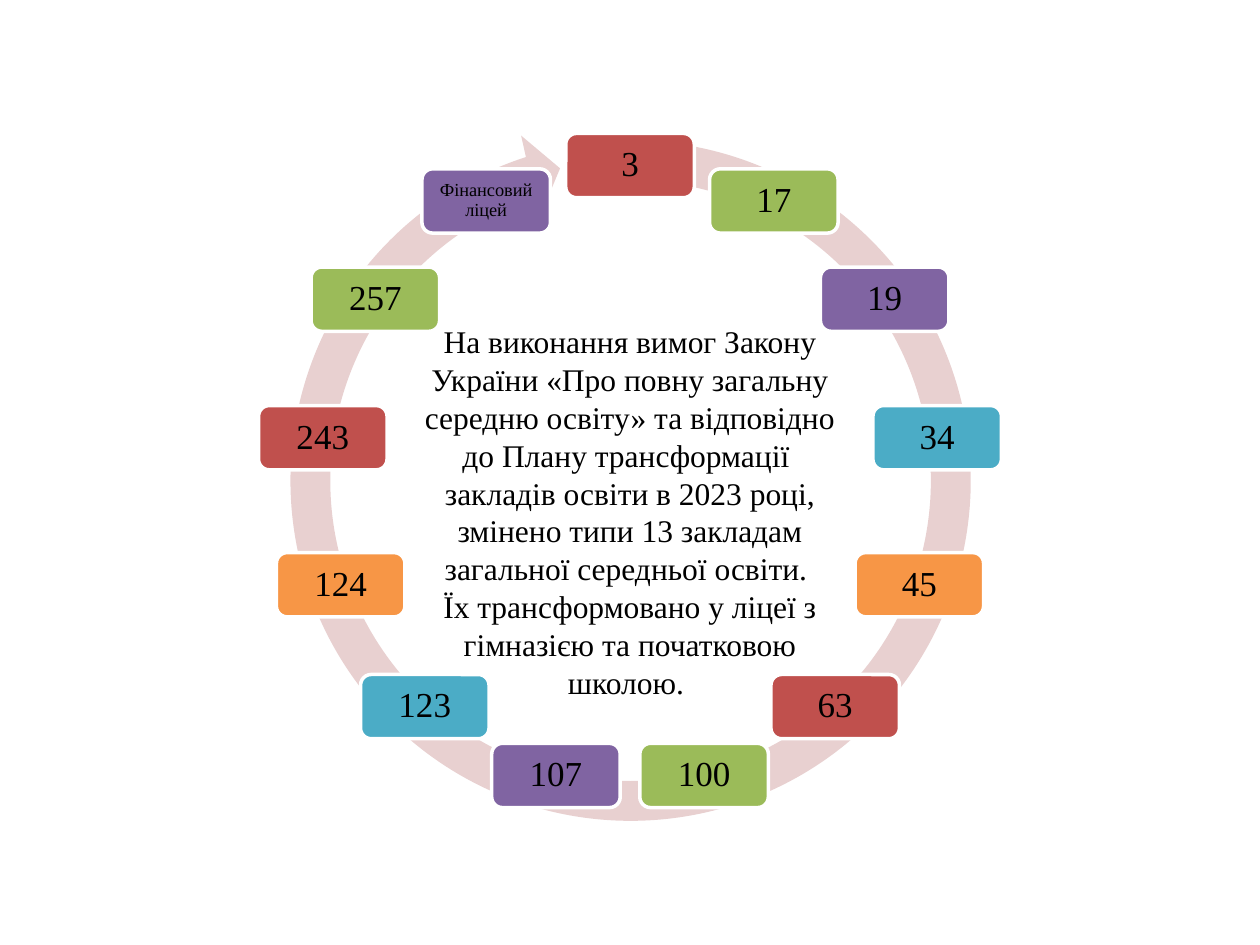
import math
from dataclasses import dataclass
from itertools import cycle

from pptx import Presentation
from pptx import util as u
from pptx.dml.color import RGBColor
from pptx.enum import shapes, text


@dataclass(frozen=True)
class Theme:
    font: str = "Times New Roman"
    ink: str = "000000"
    outline: str = "FFFFFF"
    ring: str = "E8D0D0"
    accents: tuple = ("C0504D", "9BBB59", "8064A2", "4BACC6", "F79646")
    number_size: float = 20
    name_size: float = 10.5
    body_size: float = 18


@dataclass(frozen=True)
class Box:
    left: float
    top: float
    width: float
    height: float

    def place(self) -> tuple:
        return tuple(grid(value) for value in (self.left, self.top, self.width, self.height))


@dataclass(frozen=True)
class School:
    label: str
    size: float
    color: str
    inset: float


THEME = Theme()
COLUMNS, ROWS = 100, 75
SLIDE_WIDTH = u.Inches(10)
CENTER_X, CENTER_Y, RADIUS = 50, 37.7, 24.56
NODE_WIDTH, NODE_HEIGHT = 10.2, 5.1
NUMBERS = ("3", "17", "19", "34", "45", "63", "100", "107", "123", "124", "243", "257")
LYCEUM = "Фінансовий ліцей"
RING_BOX = Box(21.3, 9.4, 57.5, 57.5)
MESSAGE_BOX = Box(31.5, 25.1, 37, 33.8)
MESSAGE = (
    "На виконання вимог Закону України «Про повну загальну середню освіту» "
    "та відповідно до Плану трансформації ",
    "закладів освіти в 2023 році, змінено типи 13 закладам загальної середньої освіти. ",
    "Їх трансформовано у ліцеї з гімназією та початковою школою. ",
)


def grid(units: float) -> int:
    return round(SLIDE_WIDTH * units / COLUMNS)


def angle_adjustment(degrees: float) -> float:
    return degrees * 60000 / 100000


def apply(target, values: dict) -> None:
    for name, value in values.items():
        setattr(target, name, value)


def write(paragraph, words: str, size: float) -> None:
    paragraph.alignment = text.PP_ALIGN.CENTER
    run = paragraph.add_run()
    run.text = words
    apply(run.font, {"name": THEME.font, "size": u.Pt(size)})
    run.font.color.rgb = RGBColor.from_string(THEME.ink)


def add_filled(slide, kind, box: Box, color: str):
    shape = slide.shapes.add_shape(kind, *box.place())
    shape.shadow.inherit = False
    shape.fill.solid()
    shape.fill.fore_color.rgb = RGBColor.from_string(color)
    return shape


def draw_ring(slide) -> None:
    ring = add_filled(slide, shapes.MSO_SHAPE.CIRCULAR_ARROW, RING_BOX, THEME.ring)
    ring.line.fill.background()
    adjustments = (
        5.5 / 100,
        angle_adjustment(5.51),
        angle_adjustment(251.76),
        angle_adjustment(276.98),
        5.8 / 100,
    )
    for index, value in enumerate(adjustments):
        ring.adjustments[index] = value


def draw_school(slide, school: School, turn: float) -> None:
    angle = math.tau * turn
    box = Box(
        CENTER_X + RADIUS * math.sin(angle) - NODE_WIDTH / 2,
        CENTER_Y - RADIUS * math.cos(angle) - NODE_HEIGHT / 2,
        NODE_WIDTH,
        NODE_HEIGHT,
    )
    node = add_filled(slide, shapes.MSO_SHAPE.ROUNDED_RECTANGLE, box, school.color)
    node.line.color.rgb = RGBColor.from_string(THEME.outline)
    node.line.width = u.Pt(2)
    frame = node.text_frame
    inset = u.Inches(school.inset)
    apply(frame, {
        "word_wrap": True,
        "vertical_anchor": text.MSO_ANCHOR.MIDDLE,
        "margin_left": inset,
        "margin_right": inset,
        "margin_top": inset,
        "margin_bottom": inset,
    })
    paragraph = frame.paragraphs[0]
    paragraph.line_spacing = 0.9
    write(paragraph, school.label, school.size)


def draw_message(slide) -> None:
    frame = slide.shapes.add_textbox(*MESSAGE_BOX.place()).text_frame
    apply(frame, {"word_wrap": True, "auto_size": text.MSO_AUTO_SIZE.SHAPE_TO_FIT_TEXT})
    for index, words in enumerate(MESSAGE):
        paragraph = frame.add_paragraph() if index else frame.paragraphs[0]
        write(paragraph, words, THEME.body_size)


def main() -> None:
    presentation = Presentation()
    apply(presentation, {"slide_width": SLIDE_WIDTH, "slide_height": grid(ROWS)})
    slide = presentation.slides.add_slide(presentation.slide_layouts[6])
    draw_ring(slide)
    colors = cycle(THEME.accents)
    schools = [School(number, THEME.number_size, next(colors), 0.1) for number in NUMBERS]
    schools.append(School(LYCEUM, THEME.name_size, next(colors), 0.08))
    for index, school in enumerate(schools):
        draw_school(slide, school, index / len(schools))
    draw_message(slide)
    presentation.save("out.pptx")


if __name__ == "__main__":
    main()
